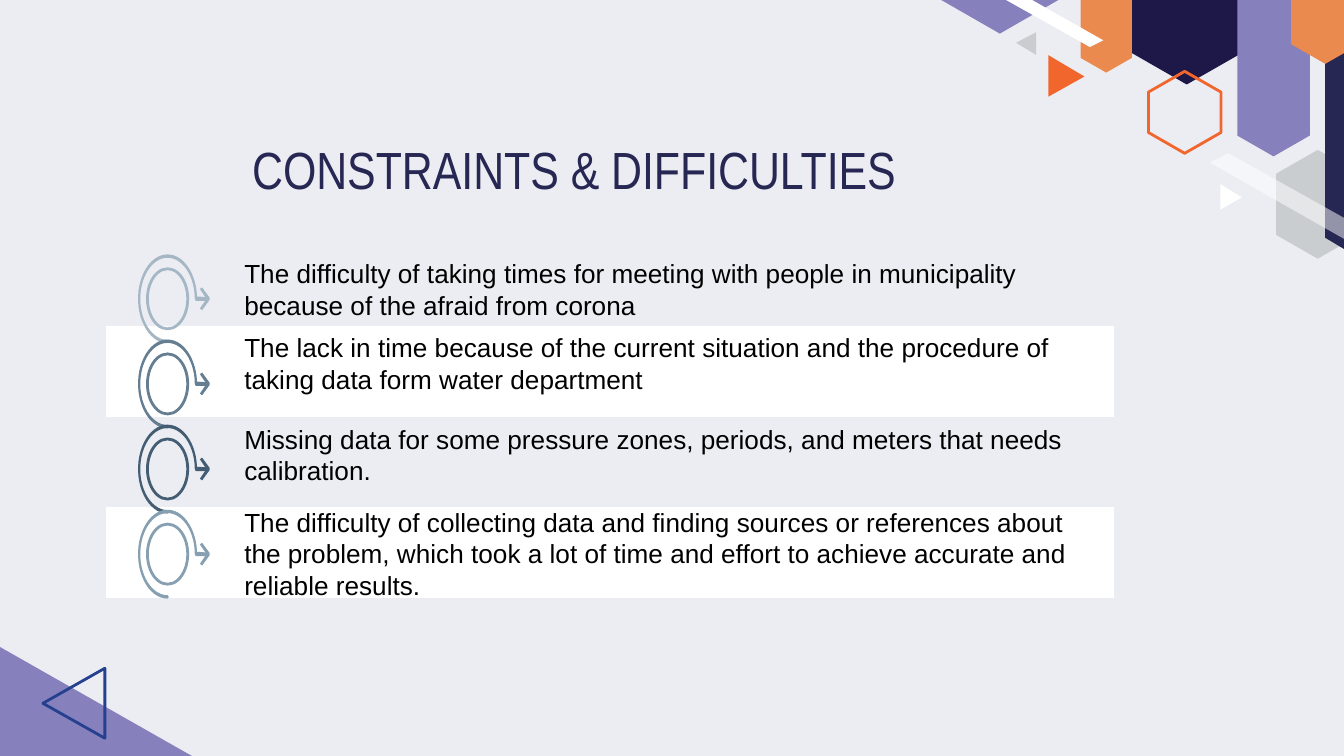
from math import cos, radians, sin

from lxml.etree import SubElement
from pptx import Presentation
from pptx.dml.color import RGBColor
from pptx.enum.shapes import MSO_SHAPE
from pptx.enum.text import MSO_ANCHOR, PP_ALIGN
from pptx.oxml.ns import qn
from pptx.util import Pt

COLORS = {
    "background": "ECEDF3", "night": "1D1848", "navy": "272753", "silver": "CACDCF",
    "violet": "8680BC", "flame": "F1662D", "orange": "EA8A4F", "white": "FFFFFF",
    "blue": "25408F", "black": "000000", "mist": "A5B7C5", "slate": "667E92",
    "steel": "445D73", "haze": "869FB1",
}
NO_GRID_STYLE = "{2D5ABB26-0587-4C30-8999-92F81FD0307C}"
TITLE = "CONSTRAINTS & DIFFICULTIES "
CONSTRAINTS = [
    (134.6, 58.3, "mist", "The difficulty of taking times for meeting with people in "
     "municipality because of the afraid from corona"),
    (174.2, 41, "slate", "The lack in time because of the current situation and the "
     "procedure of taking data form water department"),
    (223.2, 41, "steel", "Missing data for some pressure zones, periods, and meters that "
     "needs calibration."),
    (267.8, 58.3, "haze", "The difficulty of collecting data and finding sources or "
     "references about the problem, which took a lot of time and effort to achieve "
     "accurate and reliable results."),
]
HEXAGONS_BACK = [
    ((101.9, -31, 67.7, 76.3), "night"),
    ((183.6, 80.3, 44.6, 58.3), "silver"),
]
SHARDS = [
    ([(35.7, -20.9), (69.5, -1.4), (35.7, 18), (1.8, -1.4)], "violet"),
    ([(61.6, 29.5), (81, 41), (61.6, 51.8)], "flame"),
    ([(153.8, 98.6), (165.3, 105.8), (153.8, 112.3)], "white"),
    ([(55.1, 17.3), (55.1, 29.5), (44.3, 23)], "silver"),
    ([(209.9, -23.8), (229.4, -12.2), (229.4, 139), (209.9, 127.4)], "navy"),
]
GLASS_BAND = [(158.1, 82.1), (243, 129.6), (233, 135.4), (148, 87.1)]
WHITE_BAND = [(31.4, -12.2), (91.1, 21.6), (83.9, 25.2), (24.9, -7.9)]
HEXAGONS_FRONT = [
    ((162.8, -36.4, 38.9, 120.2), "violet"),
    ((191.6, -39.2, 36.7, 73.4), "orange"),
]


def rgb(name):
    """Return the named palette colour."""
    return RGBColor.from_string(COLORS[name])


def paint(shape, fill=None, line=None):
    """Give a shape a flat fill or an outline, without shadow."""
    shape.shadow.inherit = False
    if fill:
        shape.fill.solid()
        shape.fill.fore_color.rgb = rgb(fill)
    else:
        shape.fill.background()
    if line:
        shape.line.color.rgb = rgb(line)
        shape.line.width = Pt(1.5)
    else:
        shape.line.fill.background()
    return shape


def add_polygon(shapes, left, top, points, fill=None, line=None):
    """Draw a closed outline whose points are relative to left and top."""
    corners = [(Pt(left + x), Pt(top + y)) for x, y in points]
    builder = shapes.build_freeform(*corners[0])
    builder.add_line_segments(corners[1:], close=True)
    return paint(builder.convert_to_shape(), fill, line)


def add_hexagon(shapes, left, top, box, fill=None, line=None):
    """Draw an upright pointed hexagon that fills the box."""
    x, y, width, height = box
    hexagon = shapes.add_shape(
        MSO_SHAPE.HEXAGON, Pt(left + x + (width - height) / 2),
        Pt(top + y + (height - width) / 2), Pt(height), Pt(width))
    hexagon.rotation = 90
    hexagon.adjustments[0] = 0.286
    paint(hexagon, fill, line)


def add_top_corner(slide, left, top):
    """Place the hexagons and shards of the upper right corner."""
    shapes = slide.shapes
    for box, color in HEXAGONS_BACK:
        add_hexagon(shapes, left, top, box, color)
    for points, color in SHARDS:
        add_polygon(shapes, left, top, points, color)
    glass = add_polygon(shapes, left, top, GLASS_BAND, "white")
    tint = glass.fill._xPr.find(qn("a:solidFill"))[0]
    SubElement(tint, qn("a:alpha")).set("val", "50000")
    add_hexagon(shapes, left, top, (78.9, -15.8, 27.4, 54.7), "orange")
    add_polygon(shapes, left, top, WHITE_BAND, "white")
    for box, color in HEXAGONS_FRONT:
        add_hexagon(shapes, left, top, box, color)
    add_hexagon(shapes, left, top, (115.2, 38.2, 38.9, 43.9), line="flame")


def add_bottom_corner(slide, left, top):
    """Place the violet wedge and outlined triangle of the lower left corner."""
    wedge = [(-0.7, 0), (105.1, 60.1), (-0.7, 120.5), (-106.6, 60.1)]
    add_polygon(slide.shapes, left, top, wedge, "violet")
    triangle = [(56.2, 11.8), (23, 30.6), (56.2, 49.3)]
    add_polygon(slide.shapes, left, top, triangle, line="blue")


def add_title(slide, left, top, width, height):
    """Move and format the title placeholder."""
    title = slide.shapes.title
    title.left, title.top, title.width, title.height = map(Pt, (left, top, width, height))
    frame = title.text_frame
    frame.text = TITLE
    frame.word_wrap = True
    frame.vertical_anchor = MSO_ANCHOR.MIDDLE
    heading = frame.paragraphs[0]
    heading.alignment = PP_ALIGN.CENTER
    heading.line_spacing = 1.0
    heading.font.name = "Arial Narrow"
    heading.font.size = Pt(28)
    heading.font.color.rgb = rgb("navy")


def add_bands(slide, left, top, width, height):
    """Lay the table whose every second row is white."""
    table = slide.shapes.add_table(4, 5, *map(Pt, (left, top, width, height))).table
    table._tbl.tblPr.find(qn("a:tableStyleId")).text = NO_GRID_STYLE
    table.first_row = table.horz_banding = False
    first_width = 103.6
    for index, column in enumerate(table.columns):
        column.width = Pt((width - first_width) / 4 if index else first_width)
    for index, row in enumerate(table.rows):
        row.height = Pt(height / 4)
        for cell in row.cells:
            if index % 2:
                cell.fill.solid()
                cell.fill.fore_color.rgb = rgb("white")
            else:
                cell.fill.background()


def arc(radius_x, radius_y, start, end, steps=40):
    """List points along an ellipse, in degrees clockwise from the right."""
    angles = [radians(start + (end - start) * i / steps) for i in range(steps + 1)]
    return [(radius_x * cos(a), radius_y * sin(a)) for a in angles]


def add_marker(slide, center_x, center_y, color):
    """Draw one looped ring with its arrow around the centre."""
    shapes = slide.shapes.add_group_shape().shapes
    ring = shapes.add_shape(MSO_SHAPE.OVAL, Pt(center_x - 10.8), Pt(center_y - 16.1),
                            Pt(21.6), Pt(32.2))
    paint(ring, line=color)
    loop = (arc(15.8, 23.8, -3, -270) + [(0.7, 22.9)] + arc(14.6, 22, -270, 0)
            + [(15.1, 1.1), (20.9, 1.1), (20.9, -0.9)])
    add_polygon(shapes, center_x, center_y, loop, color)
    chevron = [(17.3, -5.2), (18.5, -6.1), (22.5, -0.6), (22.5, 0.6),
               (18.5, 6.1), (17.3, 5.2), (20.8, 0)]
    add_polygon(shapes, center_x, center_y, chevron, color)


def add_constraint(slide, left, top, width, height, wording):
    """Write one constraint in its box."""
    frame = slide.shapes.add_textbox(*map(Pt, (left, top, width, height))).text_frame
    frame.word_wrap = True
    frame.text = wording
    constraint = frame.paragraphs[0]
    constraint.font.name = "Arial"
    constraint.font.size = Pt(14)
    constraint.font.color.rgb = rgb("black")


def main():
    """Build and save the slide."""
    deck = Presentation()
    deck.slide_width, deck.slide_height = Pt(720), Pt(405)
    slide = deck.slides.add_slide(deck.slide_layouts[5])
    slide.background.fill.solid()
    slide.background.fill.fore_color.rgb = rgb("background")
    add_top_corner(slide, 500, 0)
    add_bottom_corner(slide, 0, 346.2)
    add_title(slide, 42.5, 67.7, 536.4, 45.4)
    add_bands(slide, 56.9, 126, 540, 194.4)
    for index, (top, height, color, wording) in enumerate(CONSTRAINTS):
        add_marker(slide, 89.8, 160.1 + 45.6 * index, color)
        add_constraint(slide, 123.8, top, 474.5, height, wording)
    deck.save("out.pptx")


if __name__ == "__main__":
    main()
